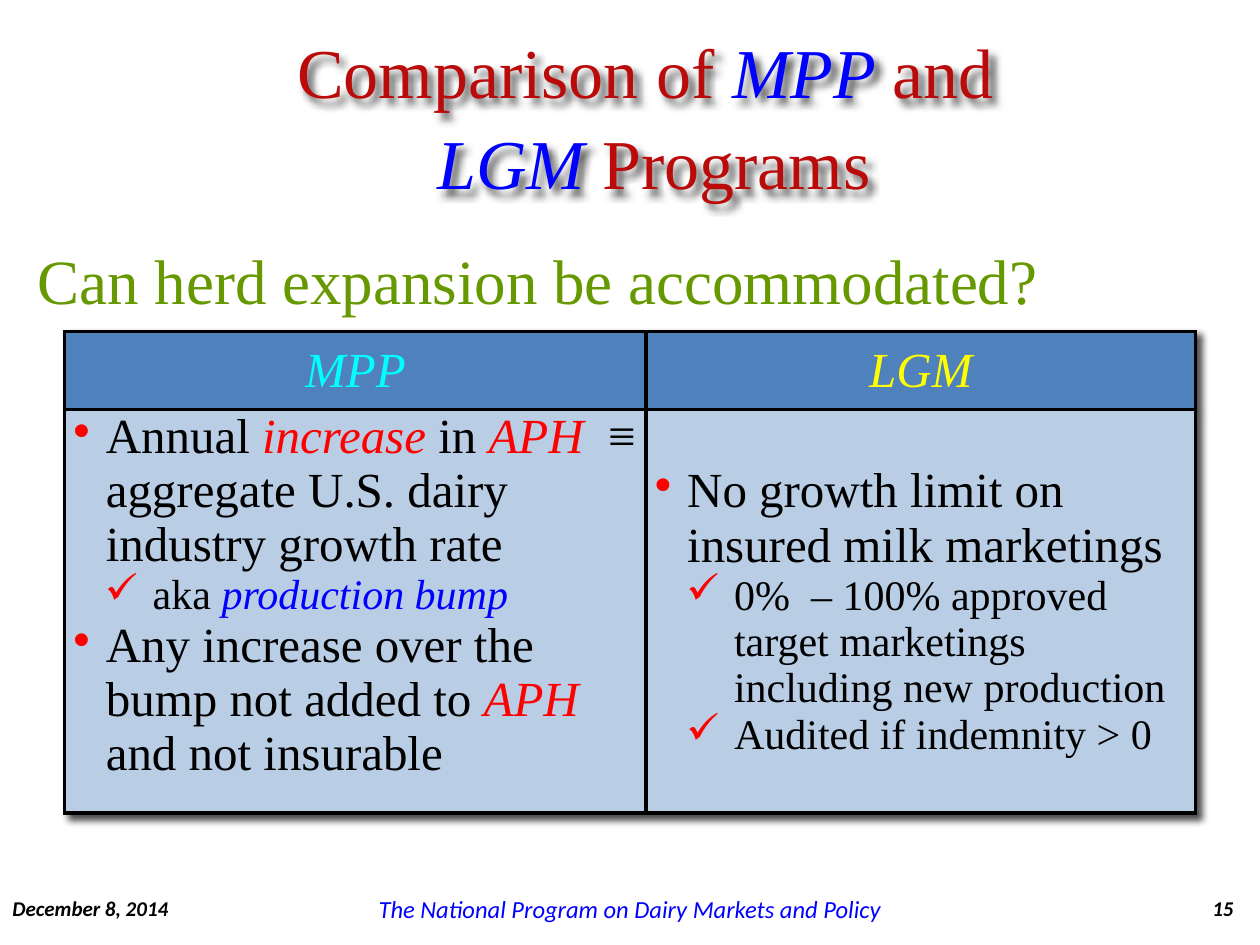
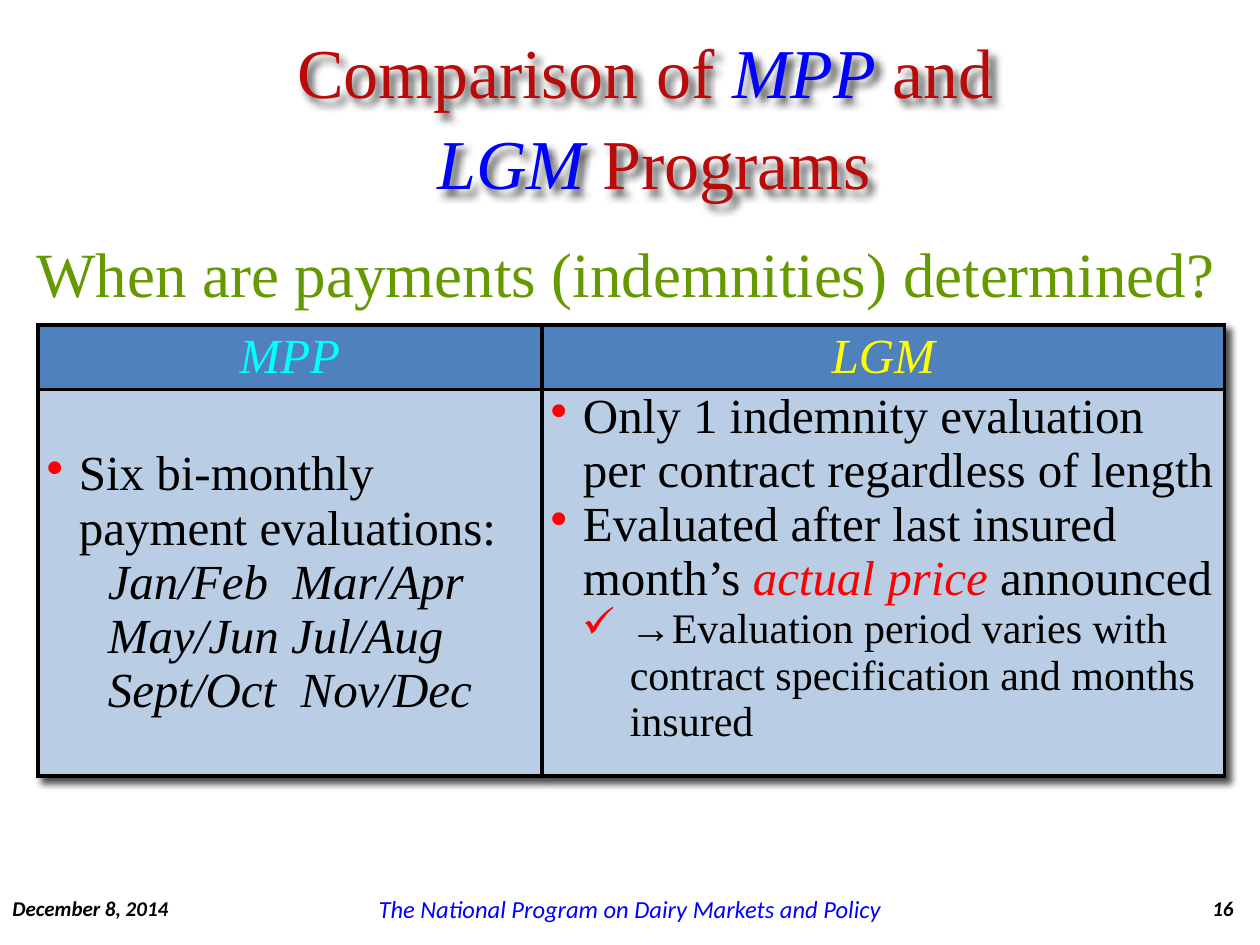
import lxml.etree
import pptx
import pptx.dml.color
import pptx.enum.text
import pptx.oxml
import pptx.oxml.ns
import pptx.util

Pt = pptx.util.Pt
ALIGN = pptx.enum.text.PP_ALIGN
MIDDLE = pptx.enum.text.MSO_ANCHOR.MIDDLE
TOP = pptx.enum.text.MSO_ANCHOR.TOP
FIT = pptx.enum.text.MSO_AUTO_SIZE

HEX = {
    "black": "000000", "red": "FF0000", "blue": "0000FF", "cyan": "00FFFF",
    "yellow": "FFFF00", "green": "669900", "crimson": "BA0A0A",
    "head": "4F81BD", "body": "B9CDE5",
}
SERIF = "Times New Roman"
FONTS = {
    "title": {"name": SERIF, "size": Pt(40), "bold": False, "italic": False},
    "topic": {"name": SERIF, "size": Pt(36)},
    "cell": {"name": SERIF, "size": Pt(28), "bold": False, "italic": False},
    "sub": {"name": SERIF, "size": Pt(24), "bold": False, "italic": False},
    "note": {"name": "Calibri", "size": Pt(12), "bold": True, "italic": True},
    "credit": {"name": "Calibri", "size": Pt(14), "italic": True},
}
LEVELS = {
    "dot": ("cell", 18.5, -18.5, "•"),
    "tick": ("sub", 45.3, -27.3, "✓"),
    "plain": ("cell", 35, 0, None),
    "head": ("cell", 0, 0, None),
}


class Deck:
    """Holds the style and the current slide, and draws each kind of element."""

    def __init__(self):
        """Open an empty deck of 720 by 540 points."""
        self.prs = pptx.Presentation()
        self.prs.slide_width, self.prs.slide_height = Pt(720), Pt(540)

    def add(self, number):
        """Start a slide with the shared title and footers."""
        self.slide = self.prs.slides.add_slide(self.prs.slide_layouts[5])
        self.text("December 8, 2014", (0, 510.5, 116, 17.3), "note", "black")
        self.text(str(number), (656, 510.5, 56, 17.3), "note", "black", ALIGN.RIGHT)
        self.text("The National Program on Dairy Markets and Policy",
                  (207.4, 510.5, 305.3, 17.3), "credit", "blue", ALIGN.CENTER)
        self.title()

    def place(self, shape, box):
        """Set the position and size of a shape."""
        for key, val in zip(("left", "top", "width", "height"), box):
            setattr(shape, key, Pt(val))

    def run(self, para, text, font, color, **more):
        """Add one formatted run."""
        run = para.add_run()
        run.text = text
        for key, val in {**FONTS[font], **more}.items():
            setattr(run.font, key, val)
        run.font.color.rgb = pptx.dml.color.RGBColor.from_string(HEX[color])

    def runs(self, para, parts, font):
        """Add plain strings in black and (text, colour) pairs in italics."""
        for part in parts:
            if isinstance(part, str):
                self.run(para, part, font, "black")
            else:
                self.run(para, *part[:1], font, part[1], italic=True)

    def shadow(self):
        """Make an effect list with a soft shadow to the lower right."""
        return pptx.oxml.parse_xml(
            f'<a:effectLst {pptx.oxml.ns.nsdecls("a")}>'
            f'<a:outerShdw blurRad="{Pt(4)}" dist="{Pt(4)}" dir="2700000" algn="tl" rotWithShape="0">'
            f'<a:srgbClr val="{HEX["black"]}"><a:alpha val="70000"/></a:srgbClr>'
            '</a:outerShdw></a:effectLst>')

    def title(self):
        """Format the title placeholder and write its two lines."""
        shape = self.slide.shapes.title
        self.place(shape, (77, 21.5, 583.2, 90))
        frame = shape.text_frame
        frame.auto_size, frame.vertical_anchor = FIT.NONE, MIDDLE
        one, two = frame.paragraphs[0], frame.add_paragraph()
        one.alignment = two.alignment = ALIGN.CENTER
        two.space_before = Pt(4)
        two._p.get_or_add_pPr().set("marL", str(Pt(10)))
        self.run(one, "Comparison of ", "title", "crimson")
        self.run(one, "MPP ", "title", "blue", italic=True)
        self.run(one, "and", "title", "crimson")
        self.run(two, "LGM ", "title", "blue", italic=True)
        self.run(two, "Programs", "title", "crimson")
        shape._element.spPr.append(self.shadow())

    def text(self, text, box, font, color, align=ALIGN.LEFT):
        """Draw a one-line text box with its text in the middle."""
        frame = self.slide.shapes.add_textbox(*map(Pt, box)).text_frame
        frame.word_wrap, frame.vertical_anchor = True, MIDDLE
        frame.paragraphs[0].alignment = align
        self.run(frame.paragraphs[0], text, font, color)

    def topic(self, text, box):
        """Draw the question above the table."""
        frame = self.slide.shapes.add_textbox(*map(Pt, box)).text_frame
        frame.word_wrap, frame.auto_size = False, FIT.SHAPE_TO_FIT_TEXT
        self.run(frame.paragraphs[0], text, "topic", "green")

    def cell(self, cell, fill, lines, anchor=MIDDLE):
        """Fill, frame and write one table cell."""
        form = {"margin_left": Pt(5), "margin_right": Pt(5), "margin_top": 0,
                "margin_bottom": 0, "vertical_anchor": anchor}
        for key, val in form.items():
            setattr(cell, key, val)
        props = cell._tc.get_or_add_tcPr()
        for side in ("lnL", "lnR", "lnT", "lnB"):
            props.append(pptx.oxml.parse_xml(
                f'<a:{side} {pptx.oxml.ns.nsdecls("a")} w="{Pt(2.25)}"><a:solidFill>'
                f'<a:srgbClr val="{HEX["black"]}"/></a:solidFill></a:{side}>'))
        cell.fill.solid()
        cell.fill.fore_color.rgb = pptx.dml.color.RGBColor.from_string(HEX[fill])
        frame = cell.text_frame
        for num, (level, *parts) in enumerate(lines):
            para = frame.add_paragraph() if num else frame.paragraphs[0]
            font, left, hang, mark = LEVELS[level]
            if level == "head":
                para.alignment = ALIGN.CENTER
            self.mark(para, left, hang, mark)
            self.runs(para, parts, font)

    def mark(self, para, left, hang, mark):
        """Set the indent and the red bullet of a paragraph."""
        props = para._p.get_or_add_pPr()
        props.set("marL", str(Pt(left)))
        props.set("indent", str(Pt(hang)))
        if mark:
            tag = pptx.oxml.ns.qn
            color = lxml.etree.SubElement(props, tag("a:buClr"))
            lxml.etree.SubElement(color, tag("a:srgbClr"), val=HEX["red"])
            lxml.etree.SubElement(props, tag("a:buChar"), char=mark)

    def table(self, spot, cols, rows, mpp, lgm, anchors):
        """Draw the two-column table that compares MPP with LGM."""
        box = (*spot, sum(cols), sum(rows))
        grid = self.slide.shapes.add_table(2, 2, *map(Pt, box)).table
        grid.first_row = grid.horz_banding = False
        grid._tbl.tblPr.insert(0, self.shadow())
        for row, high in zip(grid.rows, rows):
            row.height = Pt(high)
        heads = (("MPP", "cyan"), ("LGM", "yellow"))
        for num, (head, lines) in enumerate(zip(heads, (mpp, lgm))):
            grid.columns[num].width = Pt(cols[num])
            self.cell(grid.cell(0, num), "head", [("head", head)])
            self.cell(grid.cell(1, num), "body", lines, anchors[num])


def main():
    """Build both slides and save the deck."""
    deck = Deck()

    deck.add(15)
    deck.table(
        (37, 189.4), (332.2, 314), (44.6, 212.4),
        [("dot", "Annual ", ("increase", "red"), " in ", ("APH", "red"),
          "  ≡ aggregate U.S. dairy industry growth rate"),
         ("tick", "aka ", ("production bump", "blue")),
         ("dot", "Any increase over the bump not added to ", ("APH", "red"),
          " and not insurable")],
        [("dot", "No growth limit on insured milk marketings"),
         ("tick", "0%  – 100% approved target marketings including new production"),
         ("tick", "Audited if indemnity > 0")],
        (TOP, MIDDLE))
    deck.topic("Can herd expansion be accommodated?", (14.4, 134.6, 591.8, 51))

    deck.add(16)
    deck.table(
        (21.6, 185.8), (288, 390.2), (36.7, 211),
        [("dot", "Six bi-monthly payment evaluations:"),
         ("plain", ("Jan/Feb  Mar/Apr", "black")),
         ("plain", ("May/Jun Jul/Aug", "black")),
         ("plain", ("Sept/Oct  Nov/Dec", "black"))],
        [("dot", "Only 1 indemnity evaluation per contract regardless of length"),
         ("dot", "Evaluated after last insured month’s ",
          ("actual price ", "red"), "announced"),
         ("tick", "→Evaluation period varies with contract specification and months insured")],
        (MIDDLE, TOP))
    deck.topic("When are payments (indemnities) determined?", (13.7, 130.3, 693.4, 51))

    deck.prs.save("out.pptx")


if __name__ == "__main__":
    main()
